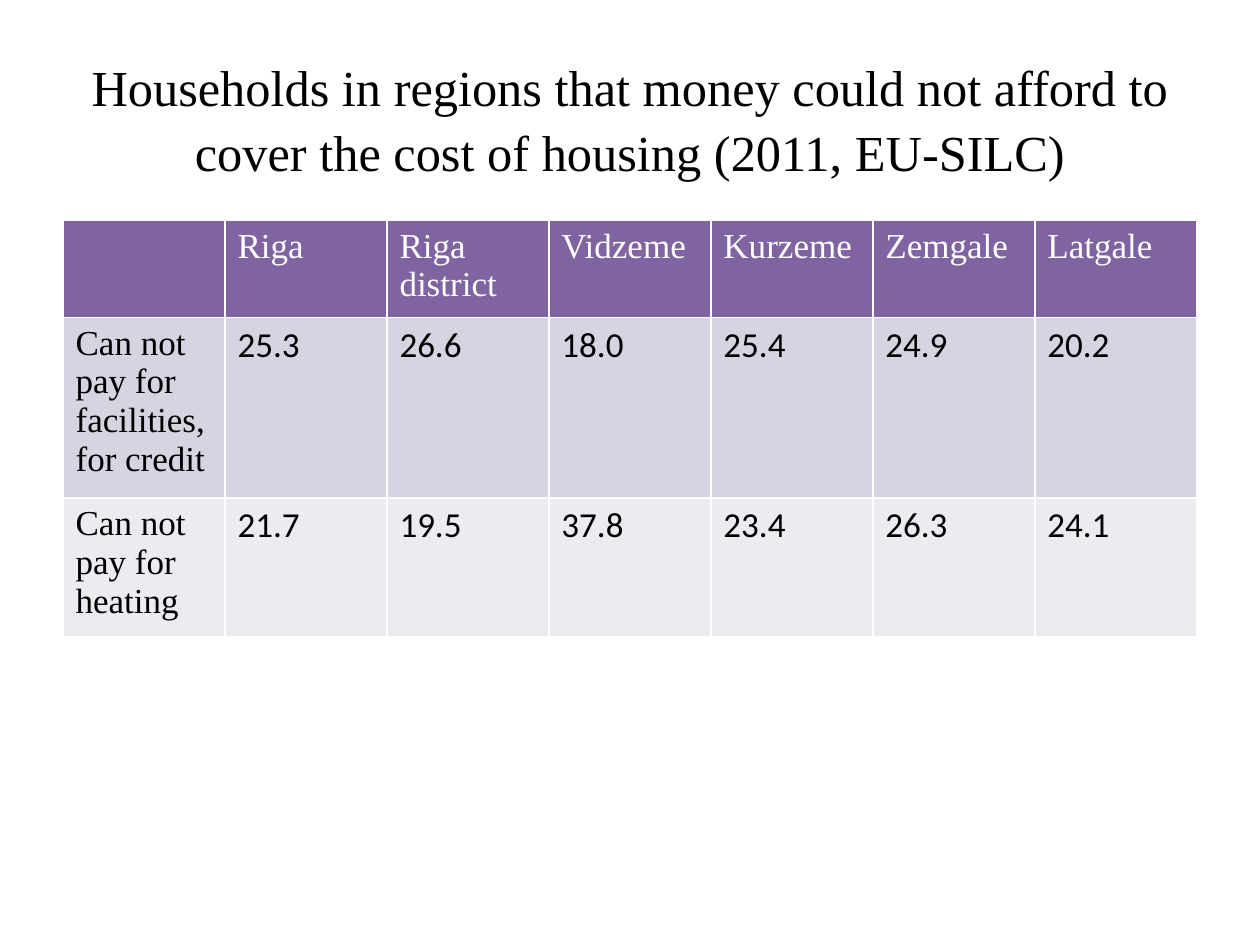
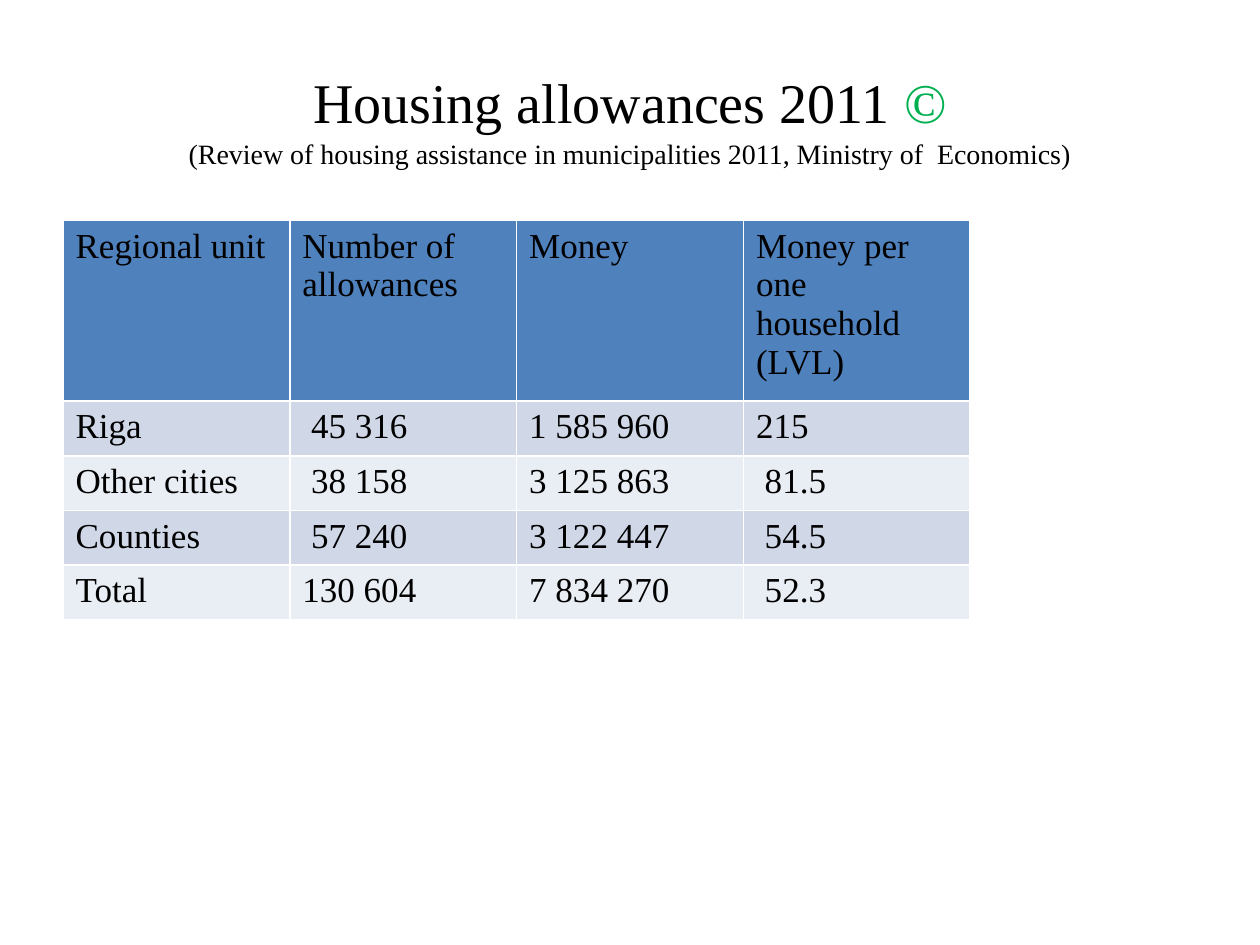
from lxml.etree import SubElement
from pptx import Presentation
from pptx.dml.color import RGBColor
from pptx.enum.text import MSO_ANCHOR, PP_ALIGN
from pptx.oxml.ns import qn
from pptx.util import Pt

BLACK = RGBColor(0x00, 0x00, 0x00)
WHITE = RGBColor(0xFF, 0xFF, 0xFF)
GREEN = RGBColor(0x00, 0xB0, 0x50)
PURPLE = RGBColor(0x80, 0x64, 0xA2)
PURPLE_BANDS = (RGBColor(0xD8, 0xD3, 0xE0), RGBColor(0xED, 0xEA, 0xF0))
BLUE = RGBColor(0x4F, 0x81, 0xBD)
BLUE_BANDS = (RGBColor(0xD0, 0xD8, 0xE8), RGBColor(0xE9, 0xED, 0xF4))
SERIF = "Times New Roman"
SANS = "Calibri"

REGIONS = [
    ["", "Riga", "Riga district", "Vidzeme", "Kurzeme", "Zemgale", "Latgale"],
    ["Can not pay for facilities, for credit", "25.3", "26.6", "18.0", "25.4", "24.9", "20.2"],
    ["Can not pay for heating", "21.7", "19.5", "37.8", "23.4", "26.3", "24.1"],
]
ALLOWANCES = [
    ["Regional unit", "Number of allowances", "Money", "Money per one household (LVL)"],
    ["Riga", " 45 316", "1 585 960", "215"],
    ["Other cities", " 38 158", "3 125 863", " 81.5"],
    ["Counties", " 57 240", "3 122 447", " 54.5"],
    ["Total", "130 604", "7 834 270", " 52.3"],
]


class Deck:
    """Holds the presentation style and the slide being built."""

    def __init__(self):
        self.presentation = Presentation()
        self.presentation.slide_width = Pt(720)
        self.presentation.slide_height = Pt(540)
        self.slide = None

    def add_slide(self):
        self.slide = self.presentation.slides.add_slide(self.presentation.slide_layouts[6])

    def add_run(self, paragraph, text, size, color=BLACK, font=SERIF):
        run = paragraph.add_run()
        run.text = text
        run.font.size = Pt(size)
        run.font.name = font
        run.font.bold = False
        run.font.color.rgb = color

    def add_title(self, *lines):
        frame = self.slide.shapes.add_textbox(Pt(36), Pt(21.6), Pt(648), Pt(90)).text_frame
        frame.word_wrap = True
        frame.vertical_anchor = MSO_ANCHOR.MIDDLE
        heading = frame.paragraphs[0]
        heading.alignment = PP_ALIGN.CENTER
        heading.line_spacing = 1.07
        for index, runs in enumerate(lines):
            if index:
                heading.add_line_break()
            for text, size, color in runs:
                self.add_run(heading, text, size, color)

    def add_borders(self, cell):
        properties = cell._tc.get_or_add_tcPr()
        for index, side in enumerate(("a:lnL", "a:lnR", "a:lnT", "a:lnB")):
            border = properties.makeelement(qn(side), {"w": str(Pt(1))})
            fill = SubElement(border, qn("a:solidFill"))
            SubElement(fill, qn("a:srgbClr"), val=str(WHITE))
            properties.insert(index, border)

    def add_table(self, rows, column_width, heights, header_fill, bands,
                  header_color=BLACK, value_font=SERIF):
        columns = len(rows[0])
        table = self.slide.shapes.add_table(
            len(rows), columns, Pt(36), Pt(126),
            Pt(column_width * columns), Pt(sum(heights))).table
        table.first_row = table.horz_banding = False
        for column in table.columns:
            column.width = Pt(column_width)
        for r, (texts, height) in enumerate(zip(rows, heights)):
            table.rows[r].height = Pt(height)
            for c, text in enumerate(texts):
                cell = table.cell(r, c)
                cell.fill.solid()
                cell.fill.fore_color.rgb = bands[(r - 1) % 2] if r else header_fill
                self.add_borders(cell)
                if text:
                    self.add_run(cell.text_frame.paragraphs[0], text, 20,
                                 BLACK if r else header_color,
                                 value_font if r and c else SERIF)


def main():
    deck = Deck()

    deck.add_slide()
    deck.add_title([("Households in regions that money could not afford to "
                     "cover the cost of housing (2011, EU-SILC)", 28.8, BLACK)])
    deck.add_table(REGIONS, 648 / 7, [55.4, 103, 79.2], PURPLE, PURPLE_BANDS, WHITE, SANS)

    deck.add_slide()
    deck.add_title(
        [("Housing allowances 2011 ", 32, BLACK), ("©", 32, GREEN)],
        [("(Review of housing assistance in municipalities 2011, "
          "Ministry of  Economics)", 16, BLACK)])
    deck.add_table(ALLOWANCES, 129.6, [95.6] + [29.4] * 4, BLUE, BLUE_BANDS)

    deck.presentation.save("out.pptx")


if __name__ == "__main__":
    main()
